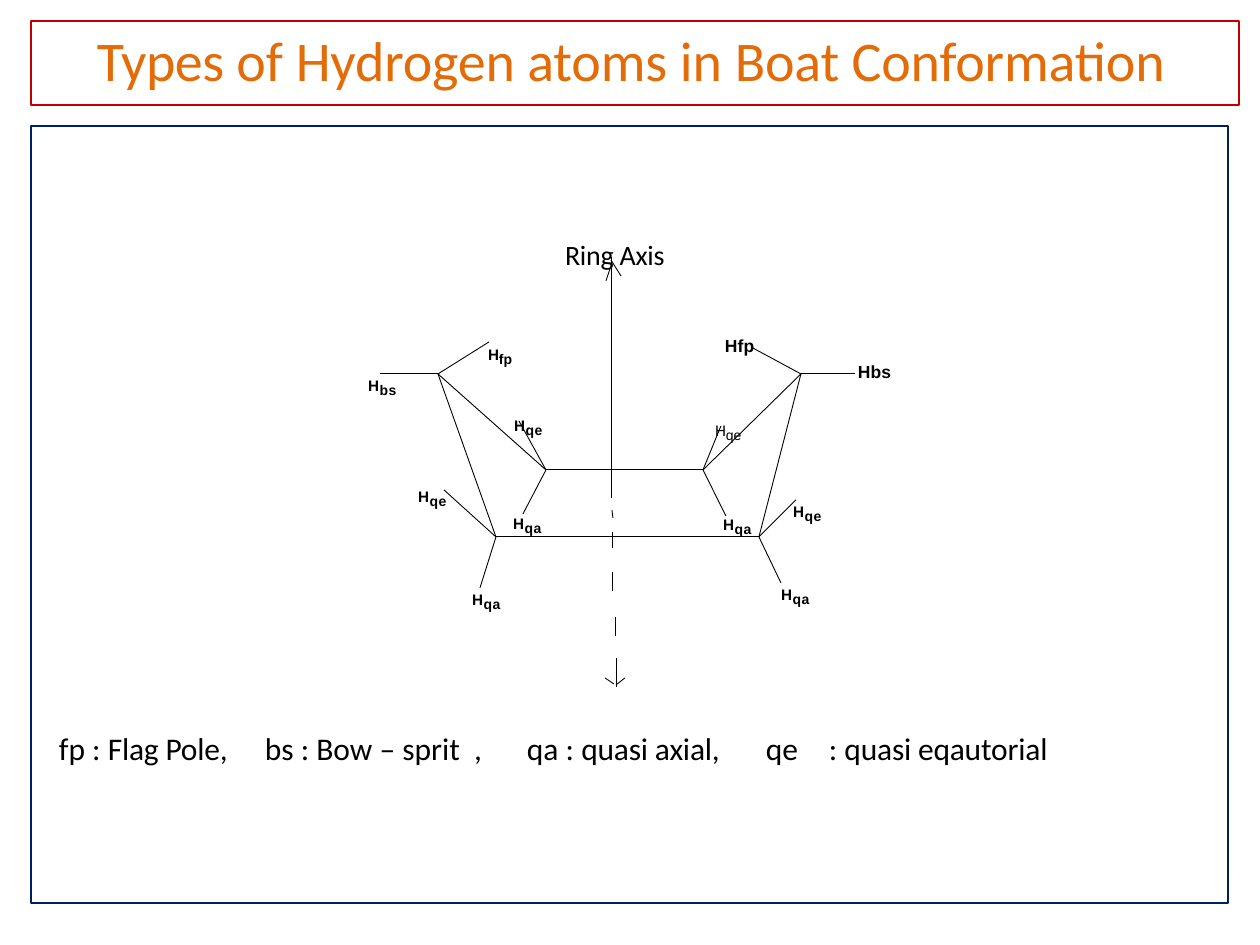
from dataclasses import dataclass

from lxml import etree
from pptx import Presentation
from pptx.dml.color import RGBColor
from pptx.enum.shapes import MSO_SHAPE
from pptx.enum.text import MSO_ANCHOR, MSO_AUTO_SIZE, PP_ALIGN
from pptx.oxml.ns import qn
from pptx.util import Pt

RECTANGLE = MSO_SHAPE.RECTANGLE
TOP = MSO_ANCHOR.TOP
NO_FIT = MSO_AUTO_SIZE.NONE
LEFT = PP_ALIGN.LEFT
TITLE_ONLY = 5
EMU_PER_PX = 914400 / 126


@dataclass(frozen=True)
class Theme:
    """Colours, fonts and type sizes of the slide."""
    ink: str = "000000"
    title: str = "E36C09"
    title_border: str = "C00000"
    frame: str = "001F5F"
    text_font: str = "Calibri"
    atom_font: str = "Arial"
    title_size: int = 32
    legend_size: int = 18
    axis_size: int = 16
    atom_size: int = 15
    plain_size: int = 10
    suffix_size: int = 8
    border: float = 0.72
    bond: float = 0.5


THEME = Theme()

CARBONS = {
    "left tip": (438, 374),
    "back left": (546, 470),
    "back right": (703, 470),
    "right tip": (801, 374),
    "front right": (759, 537),
    "front left": (496, 537),
}

HYDROGENS = [
    ("left tip", (489, 342), (483, 335), "fp", "raised"),
    ("right tip", (751, 347), (724, 332), "fp", "plain"),
    ("left tip", (380, 374), (363, 366), "bs", "raised"),
    ("right tip", (855, 374), (857, 358), "bs", "plain"),
    ("back left", (519, 421), (509, 406), "qe", "raised"),
    ("back right", (721, 426), (710, 411), "qe", "light"),
    ("front left", (444, 490), (413, 477), "qe", "raised"),
    ("front right", (796, 500), (788, 492), "qe", "raised"),
    ("back left", (523, 514), (508, 504), "qa", "raised"),
    ("back right", (726, 516), (718, 505), "qa", "raised"),
    ("front right", (781, 583), (776, 575), "qa", "raised"),
    ("front left", (480, 588), (467, 580), "qa", "raised"),
]

AXIS_LINES = [
    ((612, 257), (612, 498)),
    ((612, 510), (613, 518)),
    ((613, 532), (613, 548)),
    ((613, 572), (613, 591)),
    ((615, 617), (615, 636)),
    ((616, 658), (616, 687)),
    ((611, 260), (621, 276)),
    ((612, 263), (606, 281)),
    ((616, 685), (625, 678)),
    ((614, 684), (605, 678)),
]

TITLE = [("Types ", -0.3), ("of ", 0), ("Hydrogen atoms ", -0.1), ("in ", 0),
         ("Boat Conformation", -0.1)]

LEGEND = [
    (58, 181, [("fp : ", 0), ("Flag Pole,", -0.1)]),
    (264, 236, [("bs : Bow – sprit", 0), (" ", 4), (",", 0)]),
    (526, 207, [("qa : ", 0), ("quasi axial,", -0.1)]),
    (765, 290, [("qe\t: ", 0), ("quasi eqautorial", -0.1)]),
]


def px(length):
    """Turn pixels into EMU."""
    return round(length * EMU_PER_PX)


def set_line(line, color, width):
    """Give a line its colour and width."""
    line.color.rgb = RGBColor.from_string(color)
    line.width = Pt(width)


def add_span(para, text, *, size, font=THEME.text_font, color=THEME.ink,
             bold=False, spacing=0.0, raised=0):
    """Add formatted text to a paragraph; spacing in points, raised in percent."""
    span = para.add_run()
    span.text = text
    span.font.name = font
    span.font.size = Pt(size)
    span.font.bold = bold
    span.font.color.rgb = RGBColor.from_string(color)
    properties = span._r.get_or_add_rPr()
    properties.set("spc", str(round(spacing * 100)))
    if raised:
        properties.set("baseline", str(raised * 1000))


def prepare_text(box, *, inset, indent, before, tab=0):
    """Set the text margins of a box and return its first paragraph."""
    frame = box.text_frame
    frame.auto_size = NO_FIT
    frame.word_wrap = True
    frame.vertical_anchor = TOP
    frame.margin_left = frame.margin_right = frame.margin_bottom = 0
    frame.margin_top = px(inset)
    para = frame.paragraphs[0]
    para.alignment = LEFT
    para.space_before = Pt(before)
    properties = para._p.get_or_add_pPr()
    properties.set("marL", str(px(indent)))
    properties.set("indent", "0")
    if tab:
        stops = etree.SubElement(properties, qn("a:tabLst"))
        etree.SubElement(stops, qn("a:tab"), pos=str(px(tab)), algn="l")
    return para


def add_box(page, left, top, width, height, **layout):
    """Add a text box and return its paragraph."""
    box = page.shapes.add_textbox(px(left), px(top), px(width), px(height))
    return prepare_text(box, **layout)


def add_title(page):
    """Place and format the title placeholder."""
    box = page.shapes.title
    box.left, box.top, box.width, box.height = map(px, (31, 21, 1208, 84))
    set_line(box.line, THEME.title_border, THEME.border)
    para = prepare_text(box, inset=5, indent=66, before=2.8)
    for text, spacing in TITLE:
        add_span(para, text, size=THEME.title_size, color=THEME.title,
                 spacing=spacing)


def add_frame(page):
    """Draw the border around the content."""
    box = page.shapes.add_shape(RECTANGLE, *map(px, (31, 126, 1197, 777)))
    box.shadow.inherit = False
    box.fill.background()
    set_line(box.line, THEME.frame, THEME.border)


def add_line_drawing(page, segments):
    """Draw all segments as one open outline."""
    first_start, first_end = segments[0]
    builder = page.shapes.build_freeform(*first_start, scale=EMU_PER_PX)
    builder.add_line_segments([first_end], close=False)
    for start, end in segments[1:]:
        builder.move_to(*start)
        builder.add_line_segments([end], close=False)
    drawing = builder.convert_to_shape()
    drawing.shadow.inherit = False
    drawing.fill.background()
    set_line(drawing.line, THEME.ink, THEME.bond)


def add_atom_label(page, corner, kind, style):
    """Write a hydrogen label with its kind."""
    plain = style == "plain"
    para = add_box(page, *corner, 42, 25, inset=3, indent=1 if plain else 5,
                   before=1.1)
    look = {"font": THEME.atom_font, "bold": style != "light"}
    if plain:
        add_span(para, "H", size=THEME.plain_size, spacing=-1.1, **look)
        add_span(para, kind, size=THEME.plain_size, spacing=0.1, **look)
    else:
        tight = style == "light" or kind == "fp"
        add_span(para, "H", size=THEME.atom_size, raised=14,
                 spacing=0 if tight else 0.4, **look)
        add_span(para, kind, size=THEME.suffix_size,
                 spacing=0 if tight else 0.3, **look)


def add_molecule(page):
    """Draw the ring, its axis and the hydrogen bonds with labels."""
    ring = list(CARBONS.values())
    bonds = list(zip(ring, ring[1:] + ring[:1]))
    branches = [(CARBONS[atom[0]], atom[1]) for atom in HYDROGENS]
    add_line_drawing(page, bonds + AXIS_LINES + branches)
    for _, _, corner, kind, style in HYDROGENS:
        add_atom_label(page, corner, kind, style)


def add_legend(page):
    """Write the meaning of each abbreviation in one row."""
    for left, width, parts in LEGEND:
        para = add_box(page, left, 728, width, 42, inset=1, indent=1, before=1,
                       tab=50 if "\t" in parts[0][0] else 0)
        for text, spacing in parts:
            add_span(para, text, size=THEME.legend_size, spacing=spacing)


def main():
    """Build the slide and save it."""
    deck = Presentation()
    deck.slide_width, deck.slide_height = px(1260), px(945)
    page = deck.slides.add_slide(deck.slide_layouts[TITLE_ONLY])
    add_title(page)
    add_frame(page)
    axis = add_box(page, 564, 237, 105, 37, inset=1, indent=1, before=0.9)
    add_span(axis, "Ring Axis", size=THEME.axis_size, spacing=-0.1)
    add_legend(page)
    add_molecule(page)
    deck.save("out.pptx")


if __name__ == "__main__":
    main()
